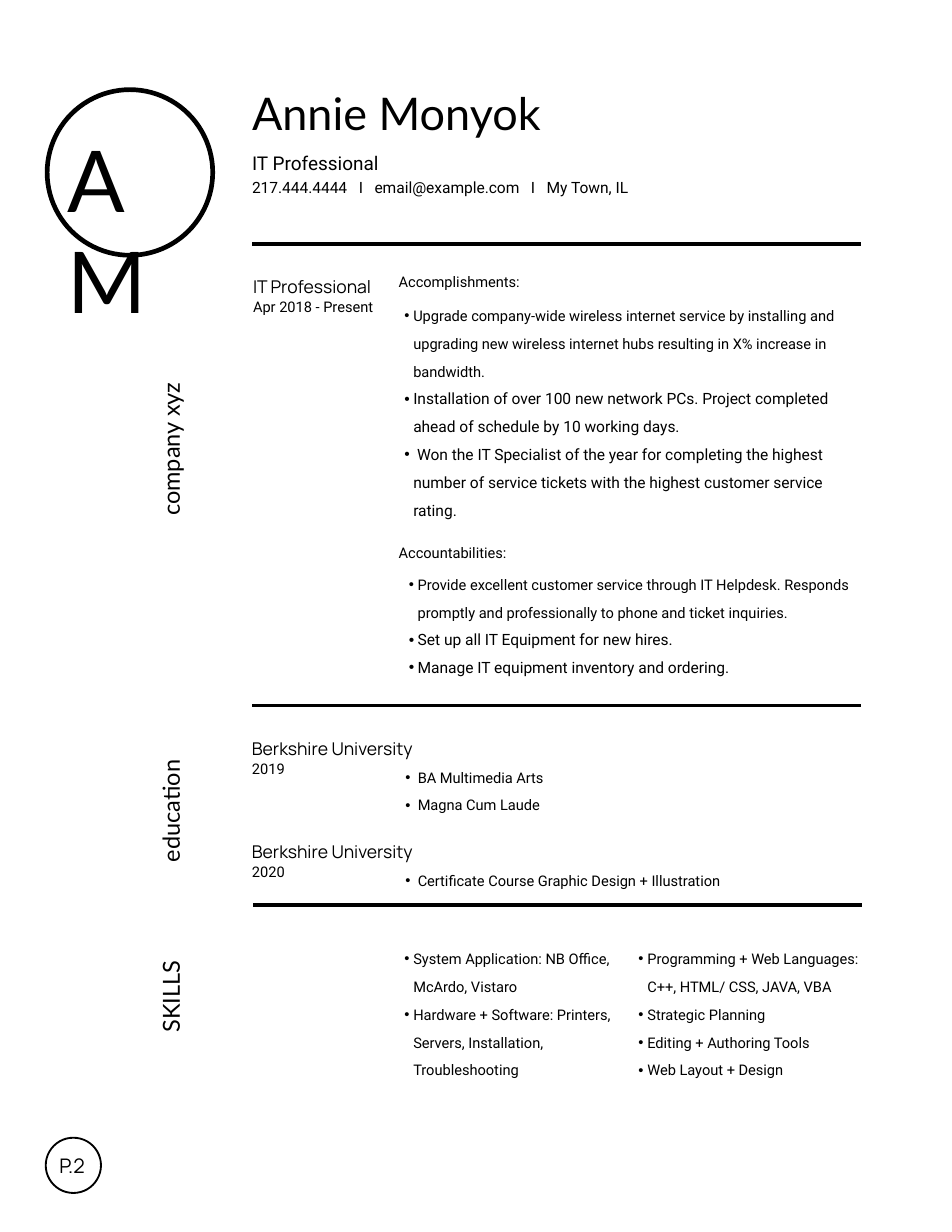
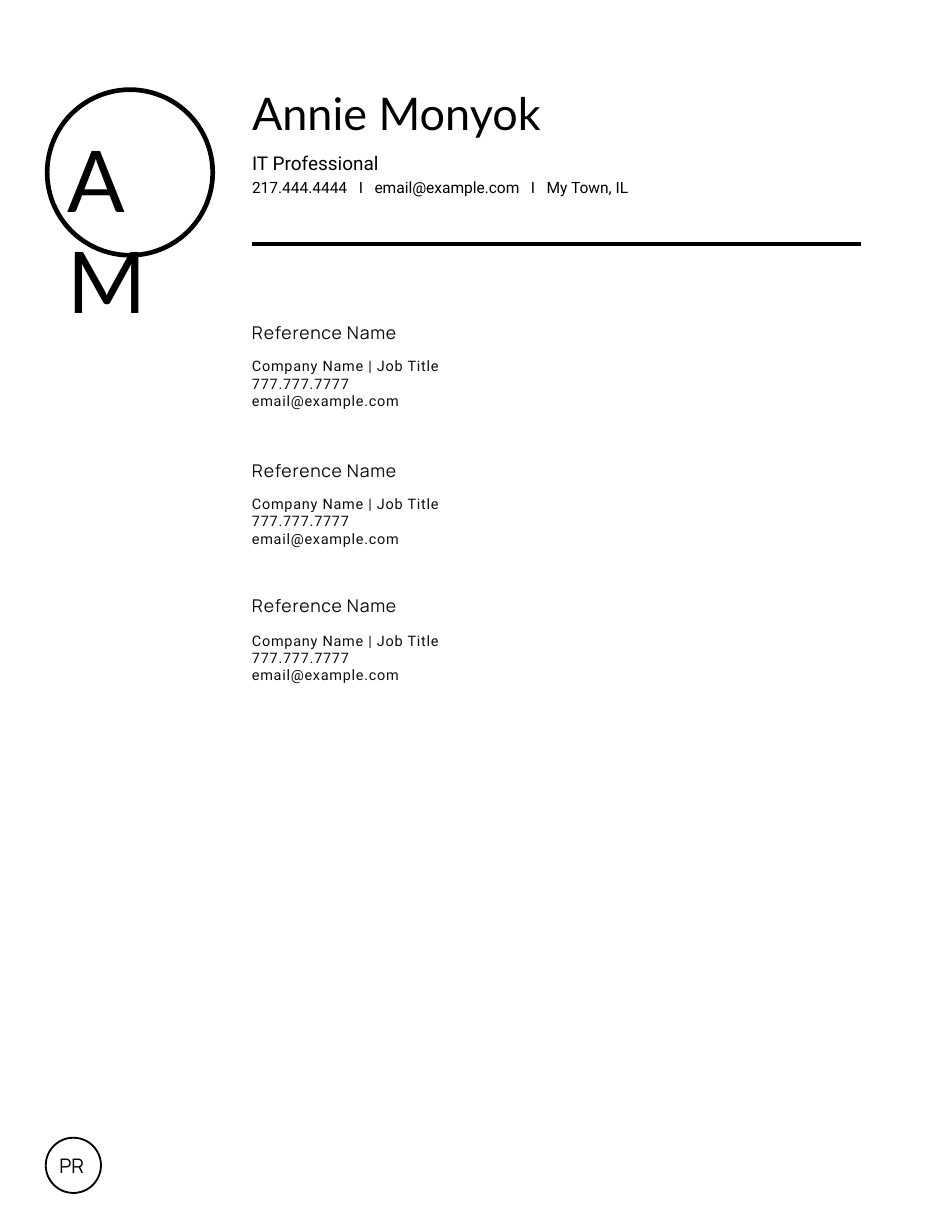
from pptx import Presentation
from pptx.dml.color import RGBColor
from pptx.enum.shapes import MSO_CONNECTOR, MSO_SHAPE
from pptx.enum.text import MSO_AUTO_SIZE, PP_ALIGN
from pptx.oxml.ns import qn
from pptx.util import Inches, Pt
from lxml import etree

INK, SOFT_INK = "000000", "0D0D0D"
HEAD, TITLE, BODY = "Lato", "Manrope", "Roboto"
LEFT, RULE_WIDTH = 2.25, 5.44
EMAIL = "email@example.com"


def color(value):
    return RGBColor.from_string(value)


class Resume:
    """Holds the shared style and the slide being filled."""

    def __init__(self):
        self.deck = Presentation()
        self.deck.slide_width, self.deck.slide_height = Inches(8.5), Inches(11)
        self.slide = None

    def text(self, left, top, width, height, lines, font=BODY, ink=INK,
             align=None, spacing=0, rotation=0, indent=None):
        """Each line is (words, size, line height), all in points."""
        box = self.slide.shapes.add_textbox(
            Inches(left), Inches(top), Inches(width), Inches(height))
        box.rotation = rotation
        frame = box.text_frame
        frame.word_wrap = True
        frame.auto_size = MSO_AUTO_SIZE.SHAPE_TO_FIT_TEXT
        frame.margin_left = frame.margin_right = 0
        frame.margin_top = frame.margin_bottom = 0
        for number, (words, size, leading) in enumerate(lines):
            paragraph = frame.add_paragraph() if number else frame.paragraphs[0]
            paragraph.line_spacing = Pt(leading)
            paragraph.alignment = align
            if indent:
                self.bullet(paragraph, *indent)
            run = paragraph.add_run()
            run.text = words
            run.font.name, run.font.size = font, Pt(size)
            run.font.color.rgb = color(ink)
            if spacing:
                run.font._element.set("spc", str(int(spacing * 100)))

    def bullet(self, paragraph, margin, hang):
        paragraph.level = 1
        props = paragraph._p.get_or_add_pPr()
        props.set("marL", str(Inches(margin)))
        props.set("indent", str(Inches(-hang)))
        etree.SubElement(props, qn("a:buFont")).set("typeface", "Arial")
        etree.SubElement(props, qn("a:buChar")).set("char", "•")

    def bullets(self, left, top, width, height, items, indent=(0.17, 0.08)):
        """Each item is (words, size)."""
        lines = [(words, size, 17.9) for words, size in items]
        self.text(left, top, width, height, lines, indent=indent)

    def rule(self, y, left=LEFT):
        line = self.slide.shapes.add_connector(
            MSO_CONNECTOR.STRAIGHT, Inches(left), Inches(y),
            Inches(left + RULE_WIDTH), Inches(y))
        line.line.color.rgb = color(INK)
        line.line.width = Pt(2.2)
        etree.SubElement(line._element.spPr, qn("a:effectLst"))

    def ring(self, left, top, size, weight):
        """The stroke lies inside the given square."""
        inset = weight / 144
        side = Inches(size - 2 * inset)
        ring = self.slide.shapes.add_shape(
            MSO_SHAPE.OVAL, Inches(left + inset), Inches(top + inset), side, side)
        ring.shadow.inherit = False
        ring.fill.background()
        ring.line.color.rgb = color(INK)
        ring.line.width = Pt(weight)

    def section(self, label, middle, length):
        """Label reading upwards, centred on the height given."""
        self.text(1.52 - length / 2, middle - 0.12, length, 0.24,
                  [(label, 15.1, 17.9)], HEAD,
                  align=PP_ALIGN.CENTER, rotation=270)

    def entry(self, left, top, title, date):
        self.text(left, top + 0.2, 1.6, 0.18, [(date, 9.4, 13.2)])
        self.text(left, top, 1.6, 0.2, [(title, 11.3, 15.8)], TITLE)

    def subhead(self, top, words):
        self.text(3.56, top, 1.57, 0.18, [(words, 9.4, 13.2)])

    def reference(self, top, details_top):
        self.text(LEFT, top, 3.77, 0.19, [("Reference Name", 11.3, 13.6)],
                  TITLE, SOFT_INK, spacing=0.5)
        details = ["Company Name | Job Title", "777.777.7777", EMAIL]
        self.text(LEFT, details_top, 3.77, 0.47,
                  [(words, 9.3, 11.2) for words in details],
                  ink=SOFT_INK, spacing=0.5)

    def page(self, mark):
        """New slide with page mark, monogram and name header."""
        self.slide = self.deck.slides.add_slide(self.deck.slide_layouts[6])
        self.slide.background.fill.solid()
        self.slide.background.fill.fore_color.rgb = color("FFFFFF")
        self.ring(0.4, 10.15, 0.51, 1.2)
        self.text(0.53, 10.3, 0.25, 0.21, [(mark, 12.9, 15.3)], TITLE)
        self.rule(2.18)
        self.ring(0.4, 0.78, 1.52, 3)
        self.text(0.6, 1.14, 1.12, 0.92, [("AM", 54.8, 65.2)], HEAD)
        self.text(LEFT, 0.77, 4.78, 0.49, [("Annie Monyok", 28.9, 34.4)], HEAD)
        self.text(LEFT, 1.32, 4.78, 0.44, [
            ("IT Professional", 12.2, 17.1),
            (f"217.444.4444   I   {EMAIL}   I   My Town, IL", 10, 14.1)])


def build_experience(resume):
    resume.page("P.2")

    # Work
    resume.section("company xyz", 4.01, 2.19)
    resume.entry(2.26, 2.43, "IT Professional", "Apr 2018 - Present")
    resume.subhead(2.41, "Accomplishments:")
    resume.bullets(3.52, 2.65, 4.18, 1.69, [
        ("Upgrade company-wide wireless internet service by installing and "
         "upgrading new wireless internet hubs resulting in X% increase in "
         "bandwidth.", 9.4),
        ("Installation of over 100 new network PCs. Project completed ahead "
         "of schedule by 10 working days.", 10),
        (" Won the IT Specialist of the year for completing the highest "
         "number of service tickets with the highest customer service "
         "rating.", 10)])
    resume.subhead(4.83, "Accountabilities:")
    resume.bullets(3.56, 5.05, 4.1, 1.2, [
        ("Provide excellent customer service through IT Helpdesk. Responds "
         "promptly and professionally to phone and ticket inquiries.", 9.4),
        ("Set up all IT Equipment for new hires.", 10),
        ("Manage IT equipment inventory and ordering.", 10)])
    resume.rule(6.3)

    # Education
    resume.section("education", 7.24, 2.19)
    degrees = [(6.56, "2019", 0.71, ["BA Multimedia Arts", "Magna Cum Laude"]),
               (7.48, "2020", 0.47,
                ["Certificate Course Graphic Design + Illustration"])]
    for top, year, height, awards in degrees:
        resume.entry(LEFT, top, "Berkshire University", year)
        resume.bullets(3.51, top + 0.21, 4.18, height,
                       [(award, 9.4) for award in awards], (0.22, 0.11))
    resume.rule(8.08, 2.26)

    # Skills
    resume.section("SKILLS", 8.9, 1.63)
    skills = {
        3.52: ["System Application: NB Office, McArdo, Vistaro",
               "Hardware + Software: Printers, Servers, Installation, "
               "Troubleshooting"],
        5.61: ["Programming + Web Languages: C++, HTML/ CSS, JAVA, VBA",
               "Strategic Planning", "Editing + Authoring Tools",
               "Web Layout + Design"]}
    for left, column in skills.items():
        resume.bullets(left, 8.39, 2.15, 1.2, [(skill, 9.4) for skill in column])


def build_references(resume):
    resume.page("PR")
    for top, details_top in [(2.87, 3.19), (4.11, 4.42), (5.31, 5.64)]:
        resume.reference(top, details_top)


def main():
    resume = Resume()
    build_experience(resume)
    build_references(resume)
    resume.deck.save("out.pptx")


if __name__ == "__main__":
    main()
